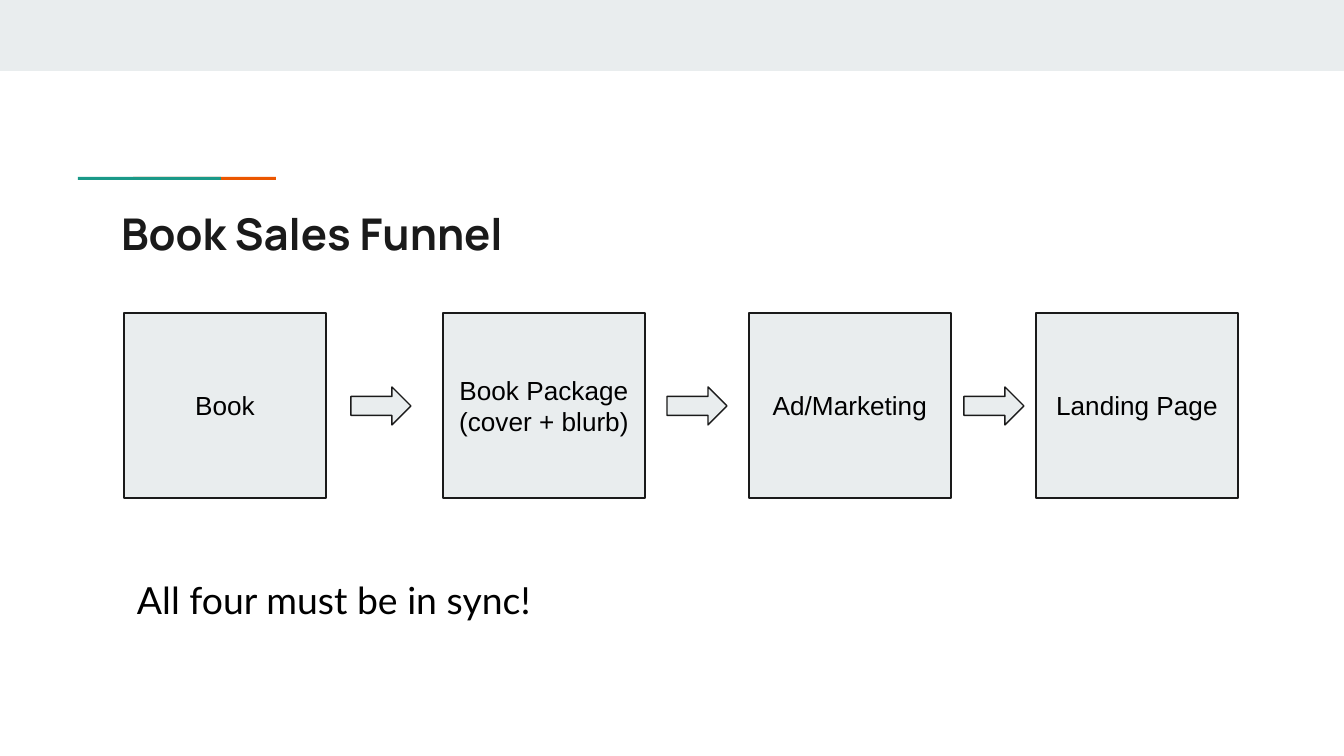
from pptx import Presentation
from pptx.dml.color import RGBColor
from pptx.enum.shapes import MSO_SHAPE
from pptx.enum.text import MSO_ANCHOR, MSO_AUTO_SIZE, PP_ALIGN
from pptx.util import Emu, Pt

INK = "1A1A1A"
PALE = "E9EDEE"
TEAL = "1A9988"
ORANGE = "EB5600"
BLACK = "000000"
STAGES = [
    ("Book", 124),
    ("Book Package (cover + blurb)", 443),
    ("Ad/Marketing", 749),
    ("Landing Page", 1036),
]
ARROW_LEFTS = [351, 667, 964]


def px(length):
    """Turn pixels into EMU at 134.4 pixels to the inch."""
    return Emu(round(length * 914400 / 134.4))


def color(code):
    """Turn a hex string into a colour."""
    return RGBColor.from_string(code)


def add_block(page, kind, left, top, width, height, fill, line=None):
    """Add a filled preset shape, outlined if a line colour is given."""
    block = page.shapes.add_shape(kind, px(left), px(top), px(width), px(height))
    block.shadow.inherit = False
    block.fill.solid()
    block.fill.fore_color.rgb = color(fill)
    if line:
        block.line.color.rgb = color(line)
        block.line.width = Pt(0.75)
    else:
        block.line.fill.background()
    return block


def write(box, text, size, font, ink, bold=False, align=PP_ALIGN.LEFT, anchor=MSO_ANCHOR.TOP):
    """Put one formatted paragraph into a box."""
    frame = box.text_frame
    frame.text = text
    frame.word_wrap = True
    frame.auto_size = MSO_AUTO_SIZE.NONE
    frame.vertical_anchor = anchor
    frame.margin_left = frame.margin_right = px(13)
    frame.margin_top = frame.margin_bottom = px(13)
    para = frame.paragraphs[0]
    para.alignment = align
    for span in para.runs:
        span.font.size = Pt(size)
        span.font.name = font
        span.font.bold = bold
        span.font.color.rgb = color(ink)


def add_title(page, text):
    """Place and format the title placeholder."""
    title = page.shapes.title
    title.left, title.top, title.width, title.height = px(108), px(194), px(1130), px(79)
    write(title, text, 23.4, "Manrope", INK, bold=True)


def add_stage(page, text, left):
    """Add one labelled stage of the funnel."""
    stage = add_block(page, MSO_SHAPE.RECTANGLE, left, 313, 202, 185, PALE, INK)
    write(stage, text, 14, "Arial", BLACK, align=PP_ALIGN.CENTER, anchor=MSO_ANCHOR.MIDDLE)


def add_note(page, text):
    """Add the closing remark below the funnel."""
    note = page.shapes.add_textbox(px(124), px(564), px(1083), px(128))
    write(note, text, 20, "Lato", BLACK)


def main():
    """Build the slide and save it."""
    deck = Presentation()
    deck.slide_width, deck.slide_height = px(1344), px(756)
    page = deck.slides.add_slide(deck.slide_layouts[5])
    add_block(page, MSO_SHAPE.RECTANGLE, 0, 0, 1344, 71, PALE)
    for left, fill in [(133, ORANGE), (78, TEAL)]:
        add_block(page, MSO_SHAPE.RECTANGLE, left, 177, 143, 3, fill)
    add_title(page, "Book Sales Funnel")
    for text, left in STAGES:
        add_stage(page, text, left)
    for left in ARROW_LEFTS:
        add_block(page, MSO_SHAPE.RIGHT_ARROW, left, 387, 60, 38, PALE, INK)
    add_note(page, "All four must be in sync!")
    deck.save("out.pptx")


if __name__ == "__main__":
    main()
